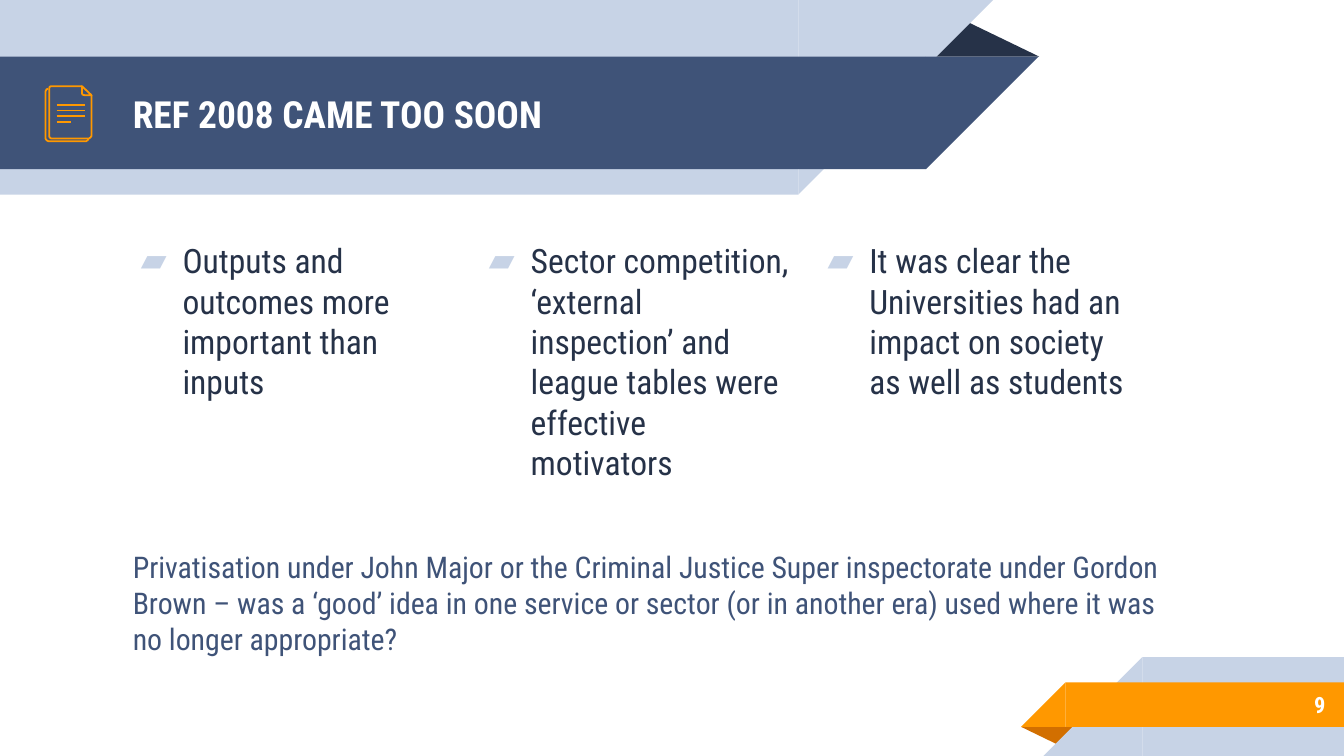
from lxml.etree import SubElement as Sub
from pptx import Presentation as Deck
from pptx.dml.color import RGBColor as Rgb
from pptx.enum.shapes import MSO_CONNECTOR as Link, MSO_SHAPE as Kind
from pptx.enum.text import MSO_ANCHOR as Anchor, MSO_AUTO_SIZE as Fit, PP_ALIGN as Align
from pptx.oxml.ns import qn
from pptx.util import Cm, Pt

WIDTH, HEIGHT = 25.4, 14.29
HUES = {"navy": "3F5378", "ink": "263248", "pale": "C7D3E6",
        "gold": "FF9800", "rust": "D26F00", "white": "FFFFFF"}
FONT = "Roboto Condensed"

TITLE = "REF 2008 CAME TOO SOON"
POINTS = [
    (2.41, "Outputs and outcomes more important than inputs"),
    (8.99, "Sector competition, ‘external inspection’ and league tables were effective motivators"),
    (15.39, "It was clear the Universities had an impact on society as well as students"),
]
NOTE = ("Privatisation under John Major or the Criminal Justice Super inspectorate under "
        "Gordon Brown – was a ‘good’ idea in one service or sector (or in another era) "
        "used where it was no longer appropriate?")
PAGE = "9"

FOLDS = [(17.48, 0.36, 2.16, 0.71, "ink", 0), (19.3, 13.74, 1.09, 0.36, "rust", 180)]
BANDS = [
    ("left", 15.09, 0, 3.68, "pale"),
    ("left", 17.5, 1.07, 2.13, "navy"),
    ("right", 21.59, 12.42, 1.87, "pale"),
    ("right", 20.14, 12.9, 0.84, "gold"),
]
SHEETS = [
    (False, [(1.67, 2.62), (1.66, 2.65), (1.63, 2.67), (0.91, 2.67), (0.88, 2.65),
             (0.86, 2.62), (0.86, 1.73), (0.88, 1.69), (0.91, 1.68)]),
    (False, [(1.73, 1.8), (1.73, 2.57), (1.71, 2.6), (1.68, 2.62), (0.97, 2.62), (0.94, 2.6),
             (0.93, 2.57), (0.93, 1.68), (0.94, 1.64), (0.97, 1.63), (1.55, 1.63)]),
    (True, [(1.55, 1.63), (1.73, 1.8), (1.6, 1.8), (1.56, 1.79), (1.55, 1.76)]),
]
RULES = [1.6, 1.6, 1.6, 1.35]


def tint(hue):
    return Rgb.from_string(HUES[hue])


def assign(item, traits):
    for name, value in traits.items():
        setattr(item, name, value)


def place(item, left, top, width, height):
    assign(item, {"left": Cm(left), "top": Cm(top), "width": Cm(width), "height": Cm(height)})


def block(shapes, kind, box, hue):
    shape = shapes.add_shape(kind, *map(Cm, box))
    shape.shadow.inherit = False
    shape.fill.solid()
    shape.fill.fore_color.rgb = tint(hue)
    shape.line.fill.background()
    return shape


def band(shapes, side, edge, top, tall, hue):
    left = side == "left"
    start, wide = (0, edge) if left else (edge, WIDTH - edge)
    block(shapes, Kind.RECTANGLE, (start, top, wide, tall), hue)
    tip = block(shapes, Kind.RIGHT_TRIANGLE, (edge if left else edge - tall, top, tall, tall), hue)
    tip._element.spPr.xfrm.set("flipV" if left else "flipH", "1")


def stroke(line):
    line.color.rgb = tint("gold")
    line.width = Pt(0.96)


def icon(shapes):
    for shut, dots in SHEETS:
        dots = [(Cm(x), Cm(y)) for x, y in dots]
        pen = shapes.build_freeform(*dots[0], scale=1)
        pen.add_line_segments(dots[1:], close=shut)
        sheet = pen.convert_to_shape()
        sheet.shadow.inherit = False
        sheet.fill.background()
        stroke(sheet.line)
    for row, end in enumerate(RULES):
        y = Cm(1.98 + 0.11 * row)
        rule = shapes.add_connector(Link.STRAIGHT, Cm(1.07), y, Cm(end), y)
        stroke(rule.line)
        Sub(rule._element.spPr, qn("a:effectLst"))


def write(shape, text, size, hue, bold=False, align=Align.LEFT, anchor=Anchor.TOP, pad=0.25):
    frame = shape.text_frame
    frame.text = text
    assign(frame, {"word_wrap": True, "auto_size": Fit.NONE, "vertical_anchor": anchor,
                   "margin_left": Cm(0.25), "margin_right": Cm(0.25),
                   "margin_top": Cm(pad), "margin_bottom": Cm(pad)})
    para = frame.paragraphs[0]
    assign(para, {"alignment": align, "space_before": Pt(0), "space_after": Pt(0)})
    font = para.runs[0].font
    assign(font, {"name": FONT, "size": Pt(size), "bold": bold})
    font.color.rgb = tint(hue)
    return para


def bullet(para):
    assign(para, {"space_before": Pt(10), "space_after": Pt(10)})
    props = para._p.get_or_add_pPr()
    props.set("marL", str(Cm(0.79)))
    props.set("indent", str(-Cm(0.79)))
    Sub(Sub(props, qn("a:buClr")), qn("a:srgbClr"), val=HUES["pale"])
    Sub(props, qn("a:buFont"), typeface=FONT)
    Sub(props, qn("a:buChar"), char="▰")


def main():
    deck = Deck()
    assign(deck, {"slide_width": Cm(WIDTH), "slide_height": Cm(HEIGHT)})
    slide = deck.slides.add_slide(deck.slide_layouts[4])
    shapes = slide.shapes
    title, *bodies, spare = slide.placeholders
    spare._element.getparent().remove(spare._element)

    for *box, hue, turn in FOLDS:
        fold = block(shapes, Kind.ISOSCELES_TRIANGLE, box, hue)
        fold.adjustments[0] = 0.32
        fold.rotation = turn
    for spec_row in BANDS:
        band(shapes, *spec_row)
    icon(shapes)

    place(title, 2.26, 1.09, 14.6, 2.13)
    write(title, TITLE, 20, "white", bold=True, anchor=Anchor.MIDDLE)
    for body, (left, text) in zip(bodies, POINTS):
        place(body, left, 4.29, 6.25, 7.52)
        bullet(write(body, text, 18, "ink"))
    for item in (title, *bodies):
        shapes._spTree.append(item._element)

    page = shapes.add_textbox(Cm(21.16), Cm(12.88), Cm(4.14), Cm(0.89))
    write(page, PAGE, 12, "white", bold=True, align=Align.RIGHT, anchor=Anchor.MIDDLE)
    note = shapes.add_textbox(Cm(2.26), Cm(10.24), Cm(20.22), Cm(2.31))
    write(note, NOTE, 16, "navy", pad=0.13)
    deck.save("out.pptx")


if __name__ == "__main__":
    main()
